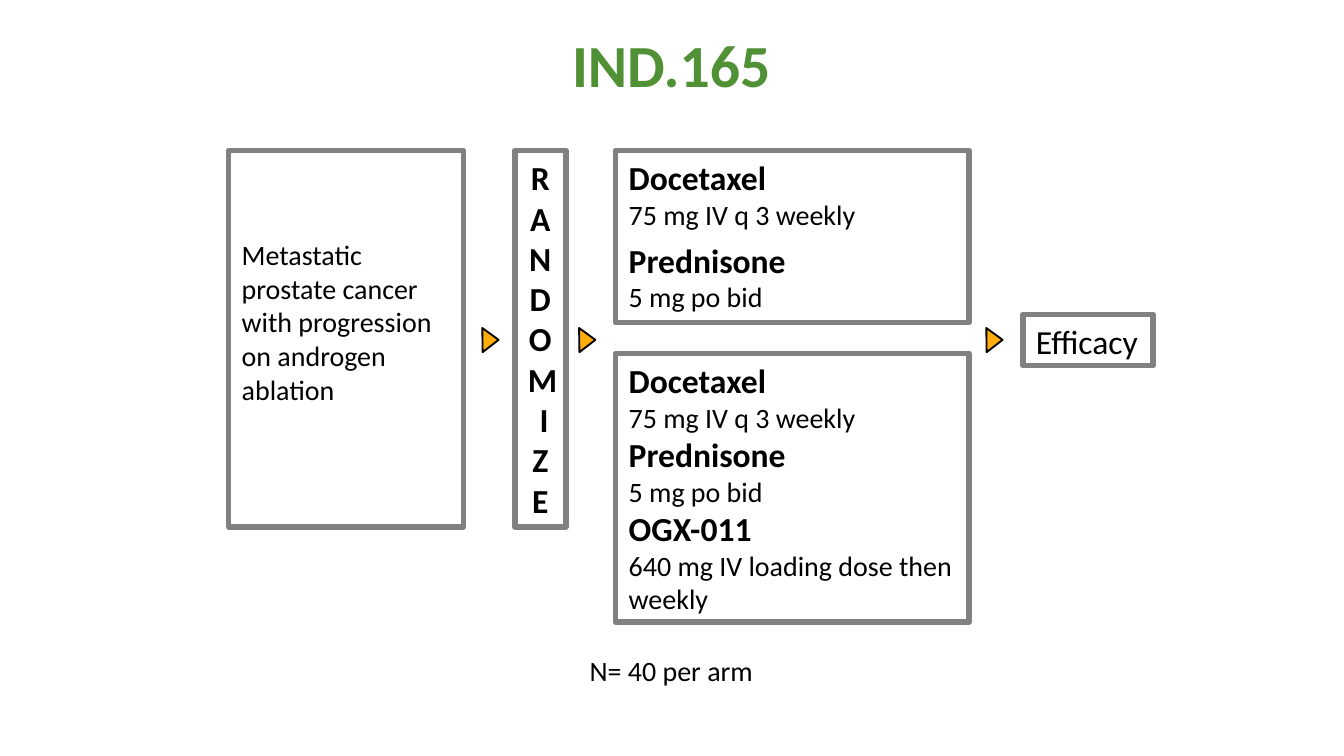
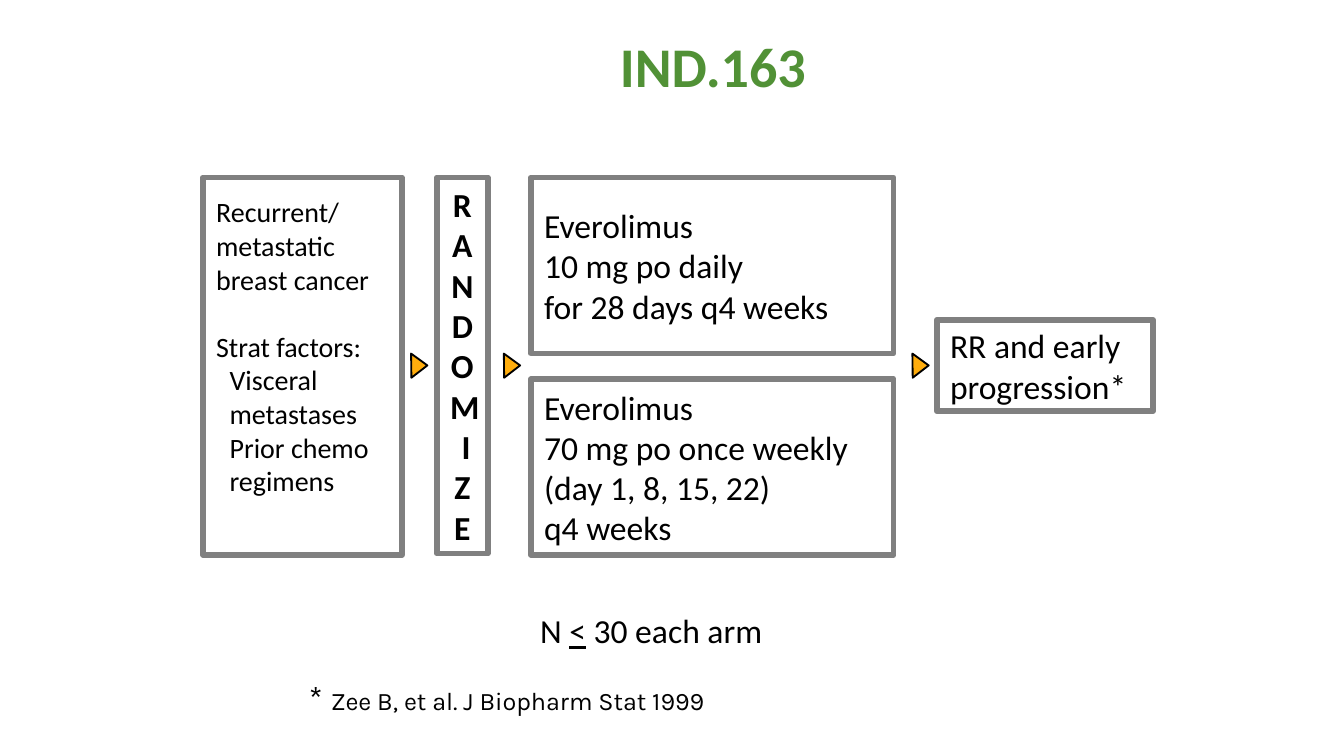
from copy import deepcopy
from dataclasses import dataclass

from pptx import Presentation
from pptx.dml.color import RGBColor
from pptx.enum.shapes import MSO_SHAPE
from pptx.enum.text import MSO_ANCHOR, PP_ALIGN
from pptx.slide import Slide
from pptx.text.text import TextFrame
from pptx.util import Inches, Pt

GREEN = RGBColor(0x51, 0x91, 0x36)
GRAY = RGBColor(0x80, 0x80, 0x80)
AMBER = RGBColor(0xFF, 0xAD, 0x0D)
BLACK = RGBColor(0x00, 0x00, 0x00)
WHITE = RGBColor(0xFF, 0xFF, 0xFF)

BODY_FONT = "Calibri"
NOTE_FONT = "Karla"
SIDE_INSET = 0.1
EDGE_INSET = 0.05
ARROW_WIDTH, ARROW_HEIGHT, ARROW_TURN = 0.18, 0.12, 89.2


@dataclass(frozen=True)
class Span:
    """A run of text; a newline in it is a line break."""

    text: str
    size: float = 18
    bold: bool = False
    underline: bool = False
    color: RGBColor = BLACK
    font: str = BODY_FONT


@dataclass(frozen=True)
class Para:
    """A paragraph with its spacing and indent."""

    spans: tuple[Span, ...]
    before: float = 0
    indent: float = 0


@dataclass(frozen=True)
class Block:
    """A placed piece of text, framed or free."""

    left: float
    top: float
    width: float
    height: float
    paras: tuple[Para, ...]
    framed: bool = True
    centered: bool = False
    middle: bool = False
    bottom: float = EDGE_INSET


@dataclass(frozen=True)
class Trial:
    """One trial design: its text blocks and flow arrows."""

    blocks: tuple[Block, ...]
    arrow_lefts: tuple[float, ...]
    arrow_top: float


def plain(text: str, size: float = 18, before: float = 0, indent: float = 0) -> Para:
    """Make a paragraph of one regular span."""
    return Para((Span(text, size),), before, indent)


def drug(name: str, dose: str, before: float = 0) -> Para:
    """Make a bold drug name with its dose on the next line."""
    return Para((Span(f"{name}\n", bold=True), Span(dose, 15)), before)


def title(text: str, left: float, top: float, height: float, size: float) -> Block:
    """Make the slide title."""
    heading = Para((Span(text, size, bold=True, color=GREEN),))
    return Block(left, top, 6.75, height, (heading,), framed=False, centered=True, middle=True)


def randomize(left: float, top: float) -> Block:
    """Make the narrow box whose text wraps to one letter a line."""
    letters = Para((Span("R A N DOM I Z E", bold=True),))
    return Block(left, top, 0.38, 2.8, (letters,), centered=True)


def everolimus_arm(top: float, schedule: str) -> Block:
    """Make one everolimus treatment arm."""
    return Block(3.95, top, 2.7, 1.31, (plain(f"Everolimus\n{schedule}"),), middle=True)


def write(frame: TextFrame, block: Block) -> None:
    """Fill a text frame with the paragraphs of a block."""
    frame.word_wrap = True
    frame.vertical_anchor = MSO_ANCHOR.MIDDLE if block.middle else MSO_ANCHOR.TOP
    frame.margin_left = frame.margin_right = Inches(SIDE_INSET)
    frame.margin_top = Inches(EDGE_INSET)
    frame.margin_bottom = Inches(block.bottom)
    for index, para in enumerate(block.paras):
        paragraph = frame.add_paragraph() if index else frame.paragraphs[0]
        paragraph.alignment = PP_ALIGN.CENTER if block.centered else PP_ALIGN.LEFT
        if para.before:
            paragraph.space_before = Pt(para.before)
        if para.indent:
            paragraph._p.get_or_add_pPr().set("marL", str(Inches(para.indent)))
        for span in para.spans:
            for line_index, line in enumerate(span.text.split("\n")):
                if line_index:
                    paragraph.add_line_break()
                    paragraph._p[-1].append(deepcopy(run._r.rPr))
                if not line:
                    continue
                run = paragraph.add_run()
                run.text = line
                run.font.name = span.font
                run.font.size = Pt(span.size)
                run.font.bold = span.bold
                run.font.underline = span.underline
                run.font.color.rgb = span.color


def draw_block(slide: Slide, block: Block) -> None:
    """Draw a text block, with a gray frame if it has one."""
    place = [Inches(v) for v in (block.left, block.top, block.width, block.height)]
    if block.framed:
        shape = slide.shapes.add_shape(MSO_SHAPE.RECTANGLE, *place)
        shape.shadow.inherit = False
        shape.fill.solid()
        shape.fill.fore_color.rgb = WHITE
        shape.line.color.rgb = GRAY
        shape.line.width = Pt(3)
    else:
        shape = slide.shapes.add_textbox(*place)
    write(shape.text_frame, block)


def draw_arrow(slide: Slide, left: float, top: float) -> None:
    """Draw an amber triangle that points to the next step."""
    arrow = slide.shapes.add_shape(
        MSO_SHAPE.ISOSCELES_TRIANGLE,
        Inches(left), Inches(top), Inches(ARROW_WIDTH), Inches(ARROW_HEIGHT),
    )
    arrow.rotation = ARROW_TURN
    arrow.shadow.inherit = False
    arrow.fill.solid()
    arrow.fill.fore_color.rgb = AMBER
    arrow.line.color.rgb = BLACK
    arrow.line.width = Pt(1)


PROSTATE_TRIAL = Trial(
    blocks=(
        title("IND.165", 1.62, 0.16, 0.62, 32),
        Block(
            1.7, 1.12, 1.75, 2.8,
            (plain("Metastatic prostate cancer with progression on androgen ablation", 15),),
            middle=True, bottom=0.3,
        ),
        randomize(3.83, 1.12),
        Block(
            4.58, 1.12, 2.63, 1.28,
            (drug("Docetaxel", "75 mg IV q 3 weekly"), drug("Prednisone", "5 mg po bid", 4.5)),
        ),
        Block(
            4.58, 2.63, 2.63, 2,
            (
                drug("Docetaxel", "75 mg IV q 3 weekly"),
                drug("Prednisone", "5 mg po bid"),
                drug("OGX-011", "640 mg IV loading dose then\nweekly"),
            ),
        ),
        Block(7.61, 2.34, 0.97, 0.38, (plain("Efficacy"),)),
        Block(4.09, 4.81, 1.81, 0.35, (plain("N= 40 per arm", 15),), framed=False, centered=True),
    ),
    arrow_lefts=(3.56, 4.28, 7.31),
    arrow_top=2.47,
)

BREAST_TRIAL = Trial(
    blocks=(
        title("IND.163", 1.93, 0.09, 0.79, 30),
        Block(
            1.51, 1.32, 1.48, 2.81,
            (
                plain("Recurrent/ metastatic breast cancer", 15),
                plain("Strat factors:", 15, before=18),
                plain("Visceral metastases", 15, indent=0.1),
                plain("Prior chemo regimens", 15, indent=0.1),
            ),
            middle=True, bottom=0.35,
        ),
        randomize(3.25, 1.32),
        everolimus_arm(1.32, "10 mg po daily\nfor 28 days q4 weeks"),
        everolimus_arm(2.82, "70 mg po once weekly (day 1, 8, 15, 22)\nq4 weeks"),
        Block(6.97, 2.38, 1.61, 0.68, (plain("RR and early progression*"),), middle=True),
        Block(
            3.44, 4.38, 2.81, 0.62,
            (Para((Span("N "), Span("<", underline=True), Span(" 30 each arm"))),),
            framed=False, centered=True, middle=True,
        ),
        Block(
            2.2, 4.99, 4.21, 0.4,
            (
                Para((
                    Span("* ", font=NOTE_FONT),
                    Span("Zee B, et al. J Biopharm Stat 1999", 13.5, font=NOTE_FONT),
                )),
            ),
            framed=False,
        ),
    ),
    arrow_lefts=(3.03, 3.72, 6.76),
    arrow_top=2.66,
)


def main() -> None:
    """Build the deck with one slide per trial."""
    deck = Presentation()
    deck.slide_width = Inches(10)
    deck.slide_height = deck.slide_width * 9 // 16
    for trial in (PROSTATE_TRIAL, BREAST_TRIAL):
        slide = deck.slides.add_slide(deck.slide_layouts[6])
        for block in trial.blocks:
            draw_block(slide, block)
        for left in trial.arrow_lefts:
            draw_arrow(slide, left, trial.arrow_top)
    deck.save("out.pptx")


if __name__ == "__main__":
    main()
